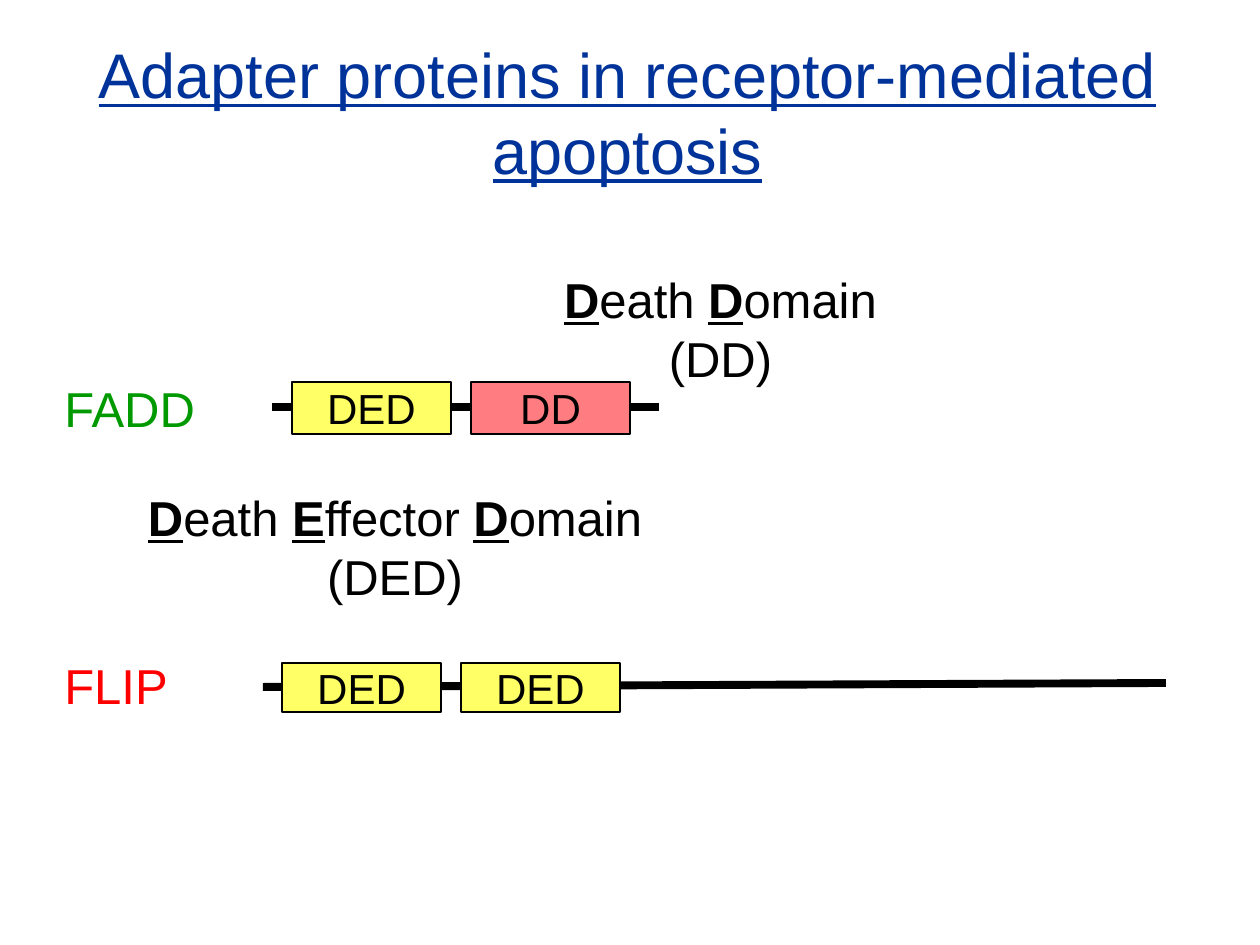
import pptx
import pptx.dml.color
import pptx.enum.shapes
import pptx.enum.text
import pptx.util
from lxml import etree

EMU_PER_PX = 914400 // 126
FONT = "Arial"
BLACK, YELLOW, PINK = "000000", "FFFF66", "FF7C80"
CENTER = pptx.enum.text.PP_ALIGN.CENTER
LEFT = pptx.enum.text.PP_ALIGN.LEFT
MIDDLE = pptx.enum.text.MSO_ANCHOR.MIDDLE

TITLE = "Adapter proteins in receptor-mediated apoptosis"
TITLE_BOX = (25, 32, 1205, 158)

# Full name, abbreviation, box (left, top, width, height)
DOMAIN_NAMES = [
    ("Death Effector Domain", "(DED)", (134, 481, 522, 130)),
    ("Death Domain", "(DD)", (551, 263, 339, 130)),
]

DOMAIN_WIDTH = 159
DOMAIN_PITCH = 179
PROTEINS = [
    {"name": "FADD", "color": "009900", "label": (52, 372, 159, 72),
     "chain": (272, 407, 659, 407), "left": 292, "top": 382, "height": 52,
     "domains": [("DED", YELLOW), ("DD", PINK)]},
    {"name": "FLIP", "color": "FF0000", "label": (52, 649, 129, 72),
     "chain": (263, 687, 1166, 683), "left": 282, "top": 663, "height": 49,
     "domains": [("DED", YELLOW), ("DED", YELLOW)]},
]


def px(*lengths):
    return [pptx.util.Emu(length * EMU_PER_PX) for length in lengths]


def rgb(color):
    return pptx.dml.color.RGBColor.from_string(color)


def format_paragraph(paragraph, size, color, alignment):
    paragraph.alignment = alignment
    for run in paragraph.runs:
        run.font.name = FONT
        run.font.size = pptx.util.Pt(size)
        run.font.color.rgb = rgb(color)


def add_text(slide, box, text, size, color, alignment, wrap=False):
    text_frame = slide.shapes.add_textbox(*px(*box)).text_frame
    text_frame.word_wrap = wrap
    text_frame.text = text
    format_paragraph(text_frame.paragraphs[0], size, color, alignment)
    return text_frame


def add_title(slide):
    text_frame = add_text(slide, TITLE_BOX, TITLE, 36, "003399", CENTER, wrap=True)
    text_frame.vertical_anchor = MIDDLE
    text_frame.paragraphs[0].runs[0].font.underline = True


def add_domain_name(slide, name, abbreviation, box):
    """Write the name with bold, underlined initials above its abbreviation."""
    text_frame = add_text(slide, box, "", 28, BLACK, CENTER)
    paragraph = text_frame.paragraphs[0]
    words = name.split()
    for number, word in enumerate(words, start=1):
        initial = paragraph.add_run()
        initial.text = word[0]
        initial.font.bold = initial.font.underline = True
        rest = paragraph.add_run()
        rest.text = word[1:] + (" " if number < len(words) else "")
    text_frame.add_paragraph().text = abbreviation
    for paragraph in text_frame.paragraphs:
        format_paragraph(paragraph, 28, BLACK, CENTER)


def add_chain(slide, ends):
    chain = slide.shapes.add_connector(
        pptx.enum.shapes.MSO_CONNECTOR.STRAIGHT, *px(*ends))
    chain.line.color.rgb = rgb(BLACK)
    chain.line.width = pptx.util.Pt(4.5)
    properties = chain._element.spPr
    etree.SubElement(properties, pptx.oxml.ns.qn("a:effectLst"))


def add_domain(slide, box, text, fill):
    shape = slide.shapes.add_shape(
        pptx.enum.shapes.MSO_SHAPE.RECTANGLE, *px(*box))
    shape.shadow.inherit = False
    shape.fill.solid()
    shape.fill.fore_color.rgb = rgb(fill)
    shape.line.color.rgb = rgb(BLACK)
    shape.line.width = pptx.util.Pt(0.75)
    text_frame = shape.text_frame
    text_frame.word_wrap = False
    text_frame.vertical_anchor = MIDDLE
    text_frame.text = text
    format_paragraph(text_frame.paragraphs[0], 24, BLACK, CENTER)


def add_protein(slide, protein):
    add_chain(slide, protein["chain"])
    for index, (text, fill) in enumerate(protein["domains"]):
        left = protein["left"] + index * DOMAIN_PITCH
        box = (left, protein["top"], DOMAIN_WIDTH, protein["height"])
        add_domain(slide, box, text, fill)
    add_text(slide, protein["label"], protein["name"], 28, protein["color"], LEFT)


def main():
    presentation = pptx.Presentation()
    presentation.slide_width = pptx.util.Inches(10)
    presentation.slide_height = pptx.util.Inches(7.5)
    slide = presentation.slides.add_slide(presentation.slide_layouts[6])
    add_title(slide)
    for name, abbreviation, box in DOMAIN_NAMES:
        add_domain_name(slide, name, abbreviation, box)
    for protein in PROTEINS:
        add_protein(slide, protein)
    presentation.save("out.pptx")


if __name__ == "__main__":
    main()
